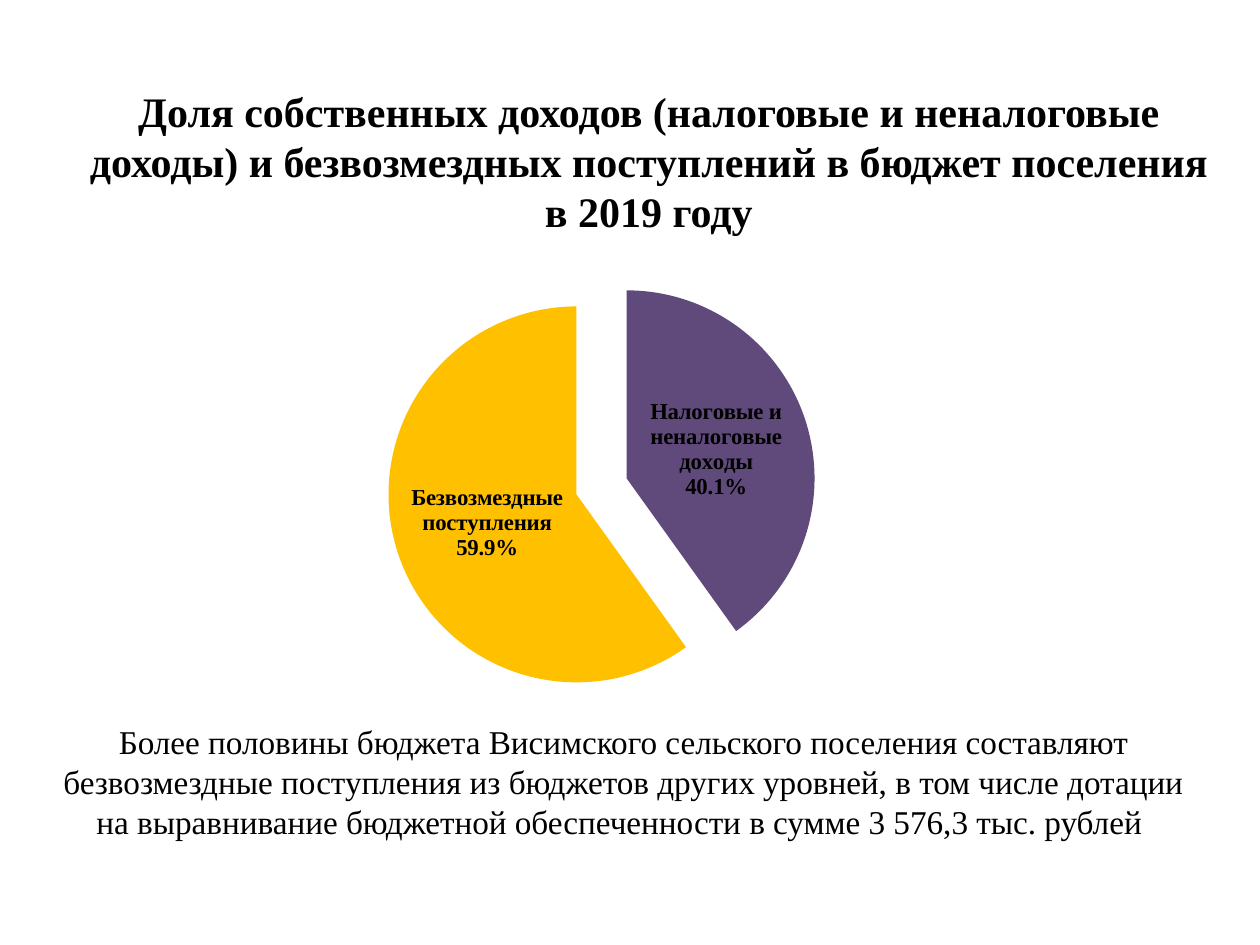
from lxml import etree
from pptx import Presentation
from pptx.chart.data import CategoryChartData
from pptx.dml.color import RGBColor
from pptx.enum.chart import XL_CHART_TYPE, XL_LABEL_POSITION
from pptx.enum.text import MSO_ANCHOR, PP_ALIGN
from pptx.oxml.ns import qn
from pptx.util import Inches, Pt

PIE = XL_CHART_TYPE.PIE
LABEL_CENTER = XL_LABEL_POSITION.CENTER
CENTER = PP_ALIGN.CENTER
TOP, MIDDLE = MSO_ANCHOR.TOP, MSO_ANCHOR.MIDDLE

WIDTH, HEIGHT = Inches(10), Inches(7.5)
FONT = "Times New Roman"
COLORS = {"text": "000000", "own income": "604A7B", "transfers": "FFC000"}

TITLE = ("Доля собственных доходов (налоговые и неналоговые доходы) "
         "и безвозмездных поступлений в бюджет поселения в 2019 году")
SUMMARY = ("Более половины бюджета Висимского сельского поселения составляют "
           "безвозмездные поступления из бюджетов других уровней, в том числе дотации "
           "на выравнивание бюджетной обеспеченности в сумме 3\u00a0576,3 тыс. рублей ")
SHARES = {"Налоговые и неналоговые доходы": 40.1, "Безвозмездные поступления": 59.9}


def color(name):
    return RGBColor.from_string(COLORS[name])


def style_font(font, size, bold=False, name=FONT):
    font.name, font.size, font.bold = name, Pt(size), bold
    font.color.rgb = color("text")


def place(left, top, width, height):
    """Turn shares of the slide into lengths."""
    return (int(left * WIDTH), int(top * HEIGHT), int(width * WIDTH), int(height * HEIGHT))


def add_text(slide, text, box, size, bold=False, anchor=TOP):
    frame = slide.shapes.add_textbox(*place(*box)).text_frame
    frame.word_wrap = True
    frame.vertical_anchor = anchor
    paragraph = frame.paragraphs[0]
    paragraph.text = text
    paragraph.alignment = CENTER
    style_font(paragraph.font, size, bold)


def set_plot_layout(chart, **shares):
    """Fix the inner plot area as shares (x, y, w, h) of the chart."""
    plot_area = chart.plots[0]._element.getparent()
    layout = plot_area.find(qn("c:layout"))
    if layout is None:
        layout = etree.Element(qn("c:layout"))
        plot_area.insert(0, layout)
    manual = etree.SubElement(layout, qn("c:manualLayout"))
    settings = {"layoutTarget": "inner", "xMode": "edge", "yMode": "edge", **shares}
    for tag, value in settings.items():
        etree.SubElement(manual, qn(f"c:{tag}")).set("val", str(value))


def explode(series, percent):
    """Pull all slices outward; the points must already be formatted."""
    explosion = etree.Element(qn("c:explosion"))
    explosion.set("val", str(percent))
    series._element.find(qn("c:dPt")).addprevious(explosion)


def label_slices(series):
    labels = series.data_labels
    labels.show_value = False
    labels.show_category_name = True
    labels.show_percentage = True
    labels.number_format = "0.0%"
    labels.number_format_is_linked = False
    labels.position = LABEL_CENTER
    style_font(labels.font, 13, bold=True)
    separator = etree.Element(qn("c:separator"))
    separator.text = "\n"
    labels._element.find(qn("c:showBubbleSize")).addnext(separator)


def add_pie(slide, box):
    data = CategoryChartData(number_format="0.0")
    data.categories = list(SHARES)
    data.add_series("Доля доходов", list(SHARES.values()))
    chart = slide.shapes.add_chart(PIE, *place(*box), data).chart
    chart.has_title = False
    chart.has_legend = False
    style_font(chart.font, 10, name="Calibri")
    chart.plots[0].vary_by_categories = True
    series = chart.plots[0].series[0]
    for index, name in enumerate(("own income", "transfers")):
        fill = series.points[index].format.fill
        fill.solid()
        fill.fore_color.rgb = color(name)
    explode(series, 14)
    label_slices(series)
    set_plot_layout(chart, x=0.07, y=0.05, w=0.84, h=0.81)


def main():
    presentation = Presentation()
    presentation.slide_width, presentation.slide_height = WIDTH, HEIGHT
    slide = presentation.slides.add_slide(presentation.slide_layouts[6])
    add_text(slide, TITLE, (0.05, 0.09, 0.93, 0.16), 24, bold=True, anchor=MIDDLE)
    add_pie(slide, (0.11, 0.26, 0.75, 0.56))
    add_text(slide, SUMMARY, (0.035, 0.757, 0.92, 0.14), 19)
    presentation.save("out.pptx")


if __name__ == "__main__":
    main()
